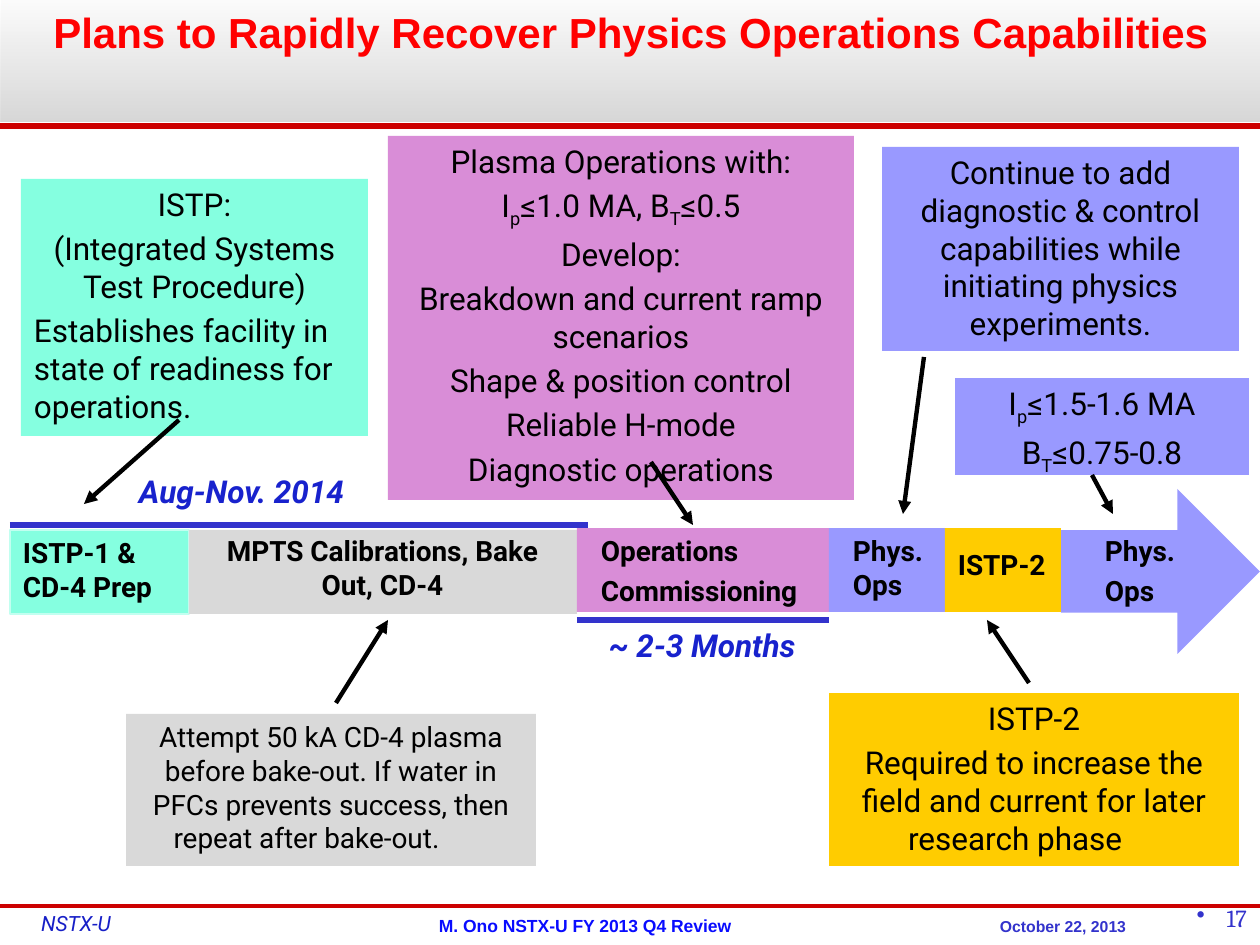
"""Build the one-page recovery timeline for physics operations."""
from lxml.etree import SubElement
from pptx import Presentation
from pptx.dml.color import RGBColor
from pptx.enum.shapes import MSO_CONNECTOR, MSO_SHAPE
from pptx.enum.text import MSO_ANCHOR, PP_ALIGN
from pptx.oxml.ns import qn
from pptx.util import Pt

PX = 914400 / 126
THEME = {
    "mint": "85FFE0", "mint edge": "C2FFF0", "orchid": "D98DD7", "violet": "9999FF",
    "amber": "FFCC00", "grey": "D9D9D9", "white": "FFFFFF", "black": "000000",
    "red": "CC0000", "blue": "3333CC", "header": ("F8F8F8", "B2B2B2"),
    "title": dict(name="Arial", size=24, color="FF0000", bold=True),
    "note": dict(name="Roboto", size=18, color="000000"),
    "small note": dict(name="Roboto", size=16, color="000000"),
    "stage": dict(name="Roboto", size=16, color="000000", bold=True),
    "period": dict(name="Roboto", size=18, color="1822CD", bold=True, italic=True),
    "review": dict(name="Arial", size=10, color="090CFF", bold=True),
    "date": dict(name="Arial", size=9, color="3333CC", bold=True),
    "project": dict(name="Roboto", size=12, color="171FC7", italic=True),
    "number": dict(name="Cambria", size=14, color="3333CC"),
}
ALIGN = {"l": PP_ALIGN.LEFT, "c": PP_ALIGN.CENTER, "r": PP_ALIGN.RIGHT}

deck = Presentation()
deck.slide_width, deck.slide_height = round(1260 * PX), round(945 * PX)
page = deck.slides.add_slide(deck.slide_layouts[6])


def add_box(bounds, fill=None, style=None, lines=(), align="c", inset=(13, 6),
            anchor=MSO_ANCHOR.TOP, kind=MSO_SHAPE.RECTANGLE):
    place = [round(value * PX) for value in bounds]
    if fill:
        box = page.shapes.add_shape(kind, *place)
        box.shadow.inherit = False
        box.fill.solid()
        box.fill.fore_color.rgb = RGBColor.from_string(THEME[fill])
        box.line.fill.background()
    else:
        box = page.shapes.add_textbox(*place)
    frame = box.text_frame
    across, down = (round(value * PX) for value in inset)
    settings = dict(word_wrap=True, vertical_anchor=anchor, margin_left=across,
                    margin_right=across, margin_top=down, margin_bottom=down)
    for key, value in settings.items():
        setattr(frame, key, value)
    for index, line in enumerate(lines):
        para = frame.add_paragraph() if index else frame.paragraphs[0]
        para.alignment = ALIGN[align[min(index, len(align) - 1)]]
        if index:
            para.space_before = Pt(THEME[style]["size"] * 0.2)
        for part, words in enumerate(line.split("_")):
            span = para.add_run()
            span.text = words
            for key, value in THEME[style].items():
                if key == "color":
                    span.font.color.rgb = RGBColor.from_string(value)
                else:
                    setattr(span.font, key, Pt(value) if key == "size" else value)
            if part % 2:
                span.font._element.set("baseline", "-25000")
    return box


def add_line(start, end, color, width, arrow=False):
    ends = [round(value * PX) for value in (*start, *end)]
    line = page.shapes.add_connector(MSO_CONNECTOR.STRAIGHT, *ends)
    line.line.color.rgb = RGBColor.from_string(THEME[color])
    line.line.width = Pt(width)
    if arrow:
        SubElement(line.line._get_or_add_ln(), qn("a:tailEnd"), type="triangle")
    SubElement(line._element.spPr, qn("a:effectLst"))


add_line((0, 126), (1260, 126), "red", 3)
add_line((0, 906), (1260, 906), "red", 2.25)

header = add_box((1, 0, 1260, 122), "white", "title",
                 ["Plans to Rapidly Recover Physics Operations Capabilities"])
header.fill.gradient()
header.fill.gradient_angle = 270
for stop, color in zip(header.fill.gradient_stops, THEME["header"]):
    stop.color.rgb = RGBColor.from_string(color)
for color in header._element.spPr.iter(qn("a:srgbClr")):
    SubElement(color, qn("a:alpha"), val="51000")

footers = [
    ((194, 907, 782, 38), None, "review", "M. Ono NSTX-U FY 2013 Q4 Review", "c", MSO_ANCHOR.MIDDLE),
    ((912, 907, 302, 38), None, "date", "October 22, 2013", "c", MSO_ANCHOR.MIDDLE),
    ((41, 911, 110, 25), "white", "project", "NSTX-U", "l", MSO_ANCHOR.TOP),
]
for bounds, fill, style, text, align, anchor in footers:
    add_box(bounds, fill, style, [text], align, (0, 0), anchor)

number = add_box((998, 897, 262, 48), None, "number", ["17"], "r")
bullet = number.text_frame.paragraphs[0]._p.get_or_add_pPr()
bullet.set("marL", str(round(30 * PX)))
bullet.set("indent", str(-round(30 * PX)))
SubElement(bullet, qn("a:buChar"), char="•")

add_box((1061, 489, 199, 165), "violet", kind=MSO_SHAPE.RIGHT_ARROW)
bands = [(10, 530, 179, "mint"), (189, 530, 388, "grey"), (577, 528, 252, "orchid"),
         (829, 528, 116, "violet"), (945, 528, 116, "amber")]
for left, top, width, fill in bands:
    band = add_box((left, top, width, 84), fill)
    if fill == "mint":
        band.line.color.rgb = RGBColor.from_string(THEME["mint edge"])
        band.line.width = Pt(1.25)

stages = [
    ((10, 530, 189, 81), ["ISTP-1 & CD-4 Prep"], "l"),
    ((198, 528, 369, 81), ["MPTS Calibrations, Bake Out, CD-4"], "c"),
    ((588, 528, 237, 87), ["Operations", "Commissioning"], "l"),
    ((840, 528, 116, 81), ["Phys. Ops"], "l"),
    ((945, 542, 116, 47), ["ISTP-2"], "l"),
    ((1092, 528, 168, 87), ["Phys.", "Ops"], "l"),
]
for bounds, lines, align in stages:
    add_box(bounds, None, "stage", lines, align)

notes = [
    ((21, 179, 347, 257), "mint", "note",
     ["ISTP:", "(Integrated Systems Test Procedure)",
      "Establishes facility in state of readiness for operations."], "ccl"),
    ((388, 136, 466, 364), "orchid", "note",
     ["Plasma Operations with:", "I_p_≤1.0 MA, B_T_≤0.5", "Develop:",
      "Breakdown and current ramp scenarios", "Shape & position control",
      "Reliable H-mode", "Diagnostic operations"], "c"),
    ((882, 147, 357, 204), "violet", "note",
     ["Continue to add diagnostic & control capabilities while initiating "
      "physics experiments."], "c"),
    ((955, 378, 294, 97), "violet", "note", ["I_p_≤1.5-1.6 MA", "B_T_≤0.75-0.8"], "c"),
    ((829, 693, 410, 173), "amber", "note",
     ["ISTP-2", "Required to increase the field and current for later research phase\t"], "c"),
    ((126, 714, 410, 152), "grey", "small note",
     ["Attempt 50 kA CD-4 plasma before bake-out. If water in PFCs prevents "
      "success, then repeat after bake-out.\t"], "c"),
    ((126, 466, 251, 50), None, "period", ["Aug-Nov. 2014"], "l"),
    ((596, 620, 228, 50), None, "period", ["~ 2-3 Months"], "l"),
]
for note in notes:
    add_box(*note)

add_line((10, 525), (588, 525), "blue", 3)
add_line((577, 620), (829, 620), "blue", 3)
arrows = [((179, 420), (84, 504)), ((651, 462), (693, 525)), ((924, 357), (903, 514)),
          ((1092, 475), (1113, 514)), ((1029, 683), (987, 620)), ((336, 703), (388, 620))]
for start, end in arrows:
    add_line(start, end, "black", 2.5, arrow=True)

deck.save("out.pptx")
